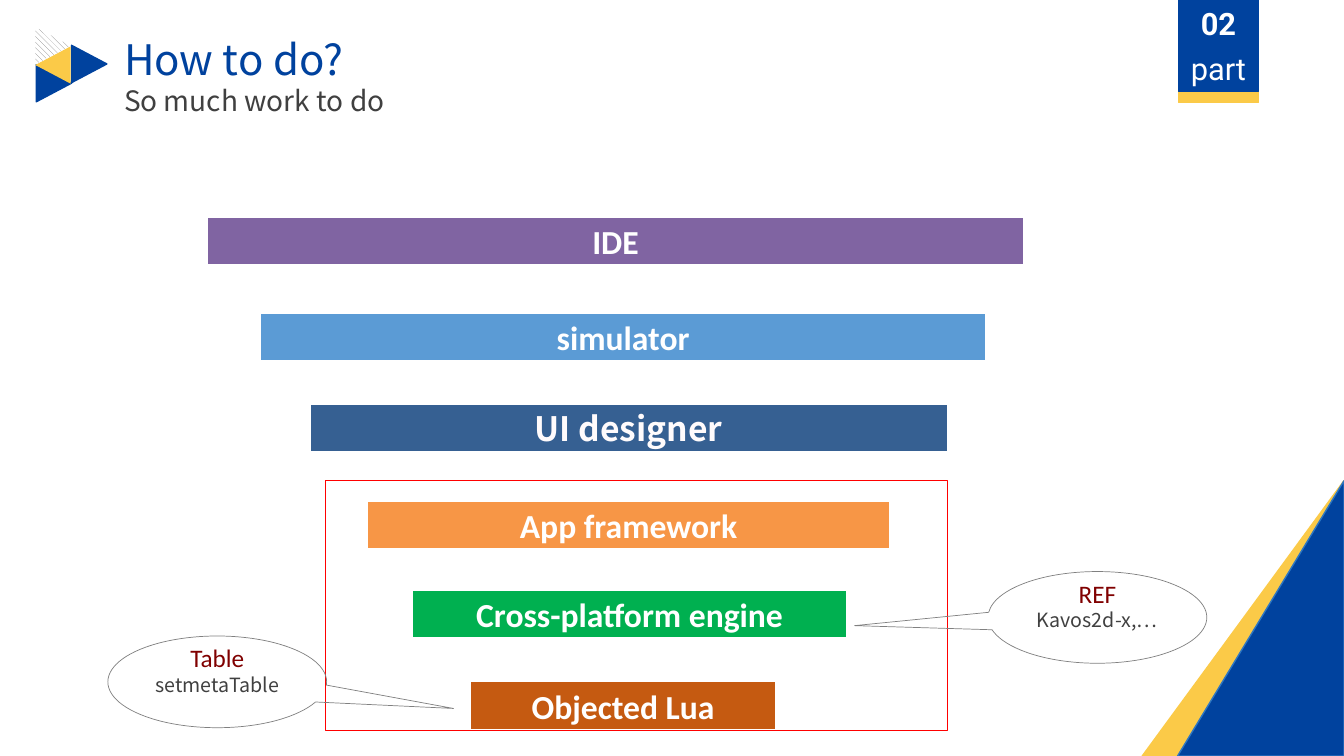
from pptx import Presentation
from pptx import util as u
from pptx.dml.color import RGBColor
from pptx.enum import dml, shapes, text

BLUE = RGBColor(0x00, 0x42, 0x9E)
EDGE_BLUE = RGBColor(0x2D, 0x76, 0xC2)
YELLOW = RGBColor(0xFB, 0xCA, 0x48)
WHITE = RGBColor(0xFF, 0xFF, 0xFF)
OFF_WHITE = RGBColor(0xFF, 0xFB, 0xFC)
GREY = RGBColor(0x80, 0x80, 0x80)
DARK = RGBColor(0x40, 0x40, 0x40)
RED = RGBColor(0xFF, 0x00, 0x00)
MAROON = RGBColor(0x80, 0x00, 0x00)
PURPLE = RGBColor(0x80, 0x64, 0xA2)
SKY = RGBColor(0x5B, 0x9B, 0xD5)
NAVY = RGBColor(0x36, 0x60, 0x92)
ORANGE = RGBColor(0xF7, 0x96, 0x46)
GREEN = RGBColor(0x00, 0xB0, 0x50)
RUST = RGBColor(0xC5, 0x5A, 0x11)

SANS, CALIBRI, ROBOTO = "Noto Sans CJK SC", "Calibri", "Roboto"
KIND = shapes.MSO_SHAPE
WIDTH, HEIGHT = 13.33, 7.5
BAR_HEIGHT = 0.5
TRIANGLE = (0.37, 0.35)
BUBBLE = (2.17, 0.91)
RIBBON_LEFT, RIBBON_WIDTH = 11.69, 0.79
CORNER_TOP = 4.77

# text, left, top, width, height, size, colour
HEADINGS = [
    ("How to do?", 1.13, 0.28, 7.7, 0.6, 30, BLUE),
    ("So much work to do", 1.13, 0.8, 7.7, 0.4, 20, DARK),
]
# left, top, rotation, fill (None is hatched), line
LOGO = [
    (0.35, 0.65, 90, BLUE, BLUE),
    (0.70, 0.46, 90, BLUE, BLUE),
    (0.34, 0.47, 270, YELLOW, None),
    (0.34, 0.28, 90, None, None),
]
# width, fill, line
CORNER = [(2.0, YELLOW, YELLOW), (1.65, BLUE, EDGE_BLUE)]
# top, height, fill, text, bold
RIBBON = [
    (0.86, 0.16, YELLOW, "", False),
    (0.44, 0.47, BLUE, "part", False),
    (0.00, 0.47, BLUE, "02", True),
]
# text, left, top, width, fill, font, colour, callout adjustments
LAYERS = [
    ("Cross-platform engine", 4.08, 5.84, 4.33, GREEN, CALIBRI, WHITE, ()),
    ("App framework", 3.63, 4.96, 5.21, ORANGE, CALIBRI, WHITE,
     (0.18, 1.04, 0.18, 1.62)),
    ("IDE", 2.04, 2.14, 8.13, PURPLE, CALIBRI, WHITE,
     (0.58, -0.08, 0.56, 0)),
    ("UI designer", 3.06, 4.0, 6.35, NAVY, SANS, OFF_WHITE, ()),
    ("simulator", 2.57, 3.09, 7.22, SKY, CALIBRI, WHITE, ()),
    ("Objected Lua", 4.65, 6.75, 3.06, RUST, CALIBRI, WHITE, ()),
]
RUNTIME_FRAME = (3.23, 4.77, 6.17, 2.48)
# heading, detail, left, top, pointer
BUBBLES = [
    ("Table", "setmetaTable", 1.07, 6.31, (1.08, 0.29)),
    ("REF", "Kavos2d-x,…", 9.8, 5.67, (-1.11, 0.09)),
]


def add_box(slide, kind, box, fill=None, line=None, weight=1, adjust=()):
    sp = slide.shapes.add_shape(kind, *map(u.Inches, box))
    sp.shadow.inherit = False
    for i, value in enumerate(adjust):
        sp.adjustments[i] = value
    if fill is None:
        sp.fill.background()
    else:
        sp.fill.solid()
        sp.fill.fore_color.rgb = fill
    if line is None:
        sp.line.fill.background()
    else:
        sp.line.color.rgb = line
        sp.line.width = u.Pt(weight)
    return sp


def write(sp, lines, align=text.PP_ALIGN.CENTER, left=0, bottom=0):
    """Fill a shape with (words, font format, colour) lines."""
    tf = sp.text_frame
    frame = dict(word_wrap=True, auto_size=text.MSO_AUTO_SIZE.NONE,
                 vertical_anchor=text.MSO_ANCHOR.MIDDLE,
                 margin_left=u.Inches(left), margin_right=0,
                 margin_top=0, margin_bottom=u.Inches(bottom))
    for name, value in frame.items():
        setattr(tf, name, value)
    for i, (words, style, color) in enumerate(lines):
        p = tf.add_paragraph() if i else tf.paragraphs[0]
        p.alignment = align
        p.space_before = u.Pt(0)
        r = p.add_run()
        r.text = words
        for name, value in style.items():
            setattr(r.font, name, value)
        r.font.color.rgb = color


def font(name, size, bold=False):
    return dict(name=name, size=u.Pt(size), bold=bold)


def add_headings(slide):
    for sp, (words, *box, size, color) in zip(slide.placeholders, HEADINGS):
        sp.left, sp.top, sp.width, sp.height = map(u.Inches, box)
        write(sp, [(words, font(SANS, size), color)],
              text.PP_ALIGN.LEFT, left=0.1)


def add_decoration(slide):
    for left, top, rotation, fill, line in LOGO:
        sp = add_box(slide, KIND.ISOSCELES_TRIANGLE, (left, top, *TRIANGLE),
                     fill, line)
        sp.rotation = rotation
        if fill is None:
            sp.fill.patterned()
            sp.fill.pattern = dml.MSO_PATTERN.WIDE_DOWNWARD_DIAGONAL
            sp.fill.fore_color.rgb = GREY
            sp.fill.back_color.rgb = WHITE
    for width, fill, line in CORNER:
        box = (WIDTH - width, CORNER_TOP, width, HEIGHT - CORNER_TOP)
        sp = add_box(slide, KIND.RIGHT_TRIANGLE, box, fill, line)
        sp._element.spPr.xfrm.set("flipH", "1")
    for top, height, fill, words, bold in RIBBON:
        box = (RIBBON_LEFT, top, RIBBON_WIDTH, height)
        sp = add_box(slide, KIND.RECTANGLE, box, fill, fill, 0.75)
        if words:
            write(sp, [(words, font(ROBOTO, 22, bold), WHITE)])


def add_layers(slide):
    for words, left, top, width, fill, face, color, adjust in LAYERS:
        kind = (KIND.LINE_CALLOUT_1_BORDER_AND_ACCENT_BAR if adjust
                else KIND.RECTANGLE)
        sp = add_box(slide, kind, (left, top, width, BAR_HEIGHT),
                     fill, WHITE, 3, adjust)
        write(sp, [(words, font(face, 24, True), color)])
    add_box(slide, KIND.RECTANGLE, RUNTIME_FRAME, line=RED, weight=0.5)


def add_bubbles(slide):
    for heading, detail, left, top, pointer in BUBBLES:
        sp = add_box(slide, KIND.OVAL_CALLOUT, (left, top, *BUBBLE),
                     line=GREY, weight=0.5, adjust=pointer)
        write(sp, [(heading, font(CALIBRI, 18), MAROON),
                   (detail, font(SANS, 14), DARK)], bottom=0.25)


def main():
    prs = Presentation()
    prs.slide_width, prs.slide_height = u.Inches(WIDTH), u.Inches(HEIGHT)
    slide = prs.slides.add_slide(prs.slide_layouts[0])
    add_headings(slide)
    add_decoration(slide)
    add_layers(slide)
    add_bubbles(slide)
    prs.save("out.pptx")


if __name__ == "__main__":
    main()
